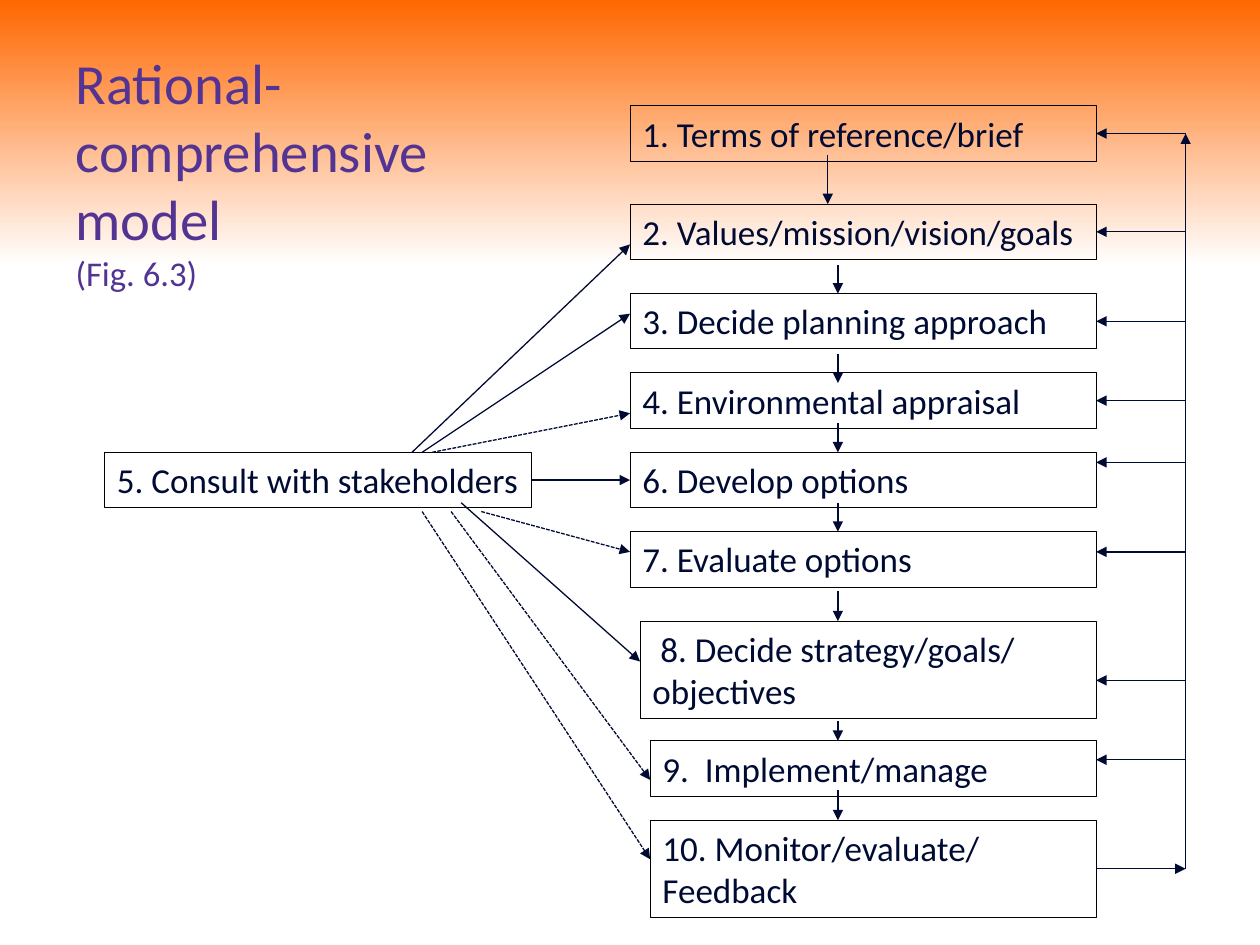
from lxml import etree
from pptx import Presentation
from pptx.dml.color import RGBColor
from pptx.enum import dml, shapes, text
from pptx.oxml import ns
from pptx.util import Inches, Pt

INK = "000B34"
FONT = "Calibri"
EDGE = 8.7    # right side of the steps
RAIL = 9.41   # feedback line
FLOW = 6.65   # arrows between the steps
ONE, TWO = 0.44, 0.77  # box heights for one and two lines

# number: (text, left, top, height)
STEPS = {
    1: ("1. Terms of reference/brief", 5, 0.84, ONE),
    2: ("2. Values/mission/vision/goals", 5, 1.62, ONE),
    3: ("3. Decide planning approach", 5, 2.33, ONE),
    4: ("4. Environmental appraisal", 5, 2.96, ONE),
    6: ("6. Develop options", 5, 3.59, ONE),
    7: ("7. Evaluate options", 5, 4.22, ONE),
    8: (" 8. Decide strategy/goals/ objectives", 5.08, 4.93, TWO),
    9: ("9.  Implement/manage", 5.16, 5.88, ONE),
    10: ("10. Monitor/evaluate/ Feedback", 5.16, 6.51, TWO),
}
CONSULT = ("5. Consult with stakeholders", 0.83, 3.59, ONE)

# x, top, bottom
DOWN = [(6.57, 1.23, 1.62), (FLOW, 2.1, 2.33), (FLOW, 2.81, 3.04),
        (FLOW, 3.36, 3.59), (FLOW, 3.99, 4.22), (FLOW, 4.69, 4.93),
        (FLOW, 5.72, 5.88), (FLOW, 6.27, 6.51)]

# start x, start y, step, end y, dashed
LINKS = [(3.27, 3.59, 2, 1.94, False), (3.35, 3.59, 3, 2.49, False),
         (3.43, 3.59, 4, 3.28, True), (3.82, 4.06, 7, 4.38, True),
         (3.66, 3.99, 8, 5.25, False), (3.58, 4.06, 9, 6.19, True),
         (3.35, 4.06, 10, 6.82, True)]

# feedback into the middle of a step's side, or at a given height
MIDDLE = [1, 2, 3, 4]
HEIGHTS = [3.67, 4.38, 5.4, 6.03]


def rgb(code):
    return RGBColor.from_string(code)


def style(run, size, color):
    run.font.name = FONT
    run.font.size = Pt(size)
    run.font.color.rgb = rgb(color)


def add_box(slide, label, left, top, high, right=EDGE):
    box = slide.shapes.add_shape(
        shapes.MSO_SHAPE.RECTANGLE, Inches(left), Inches(top),
        Inches(right - left), Inches(high))
    box.shadow.inherit = False
    box.fill.background()
    box.line.color.rgb = rgb("000000")
    box.line.width = Pt(0.5)
    frame = box.text_frame
    frame.word_wrap = True
    frame.auto_size = text.MSO_AUTO_SIZE.SHAPE_TO_FIT_TEXT
    frame.vertical_anchor = text.MSO_ANCHOR.TOP
    frame.text = label
    frame.paragraphs[0].alignment = text.PP_ALIGN.LEFT
    style(frame.paragraphs[0].runs[0], 20, INK)
    return box


def add_arrow(slide, x1, y1, x2, y2, dashed=False):
    arrow = slide.shapes.add_connector(
        shapes.MSO_CONNECTOR.STRAIGHT,
        Inches(x1), Inches(y1), Inches(x2), Inches(y2))
    arrow.line.color.rgb = rgb(INK)
    arrow.line.width = Pt(0.75)
    if dashed:
        arrow.line.dash_style = dml.MSO_LINE.SQUARE_DOT
    line = arrow.line._get_or_add_ln()
    etree.SubElement(line, ns.qn("a:tailEnd"), type="triangle")
    etree.SubElement(arrow._element.spPr, ns.qn("a:effectLst"))
    return arrow


def middle(step):
    _, _, top, high = step
    return top + high / 2


def add_title(slide):
    title = slide.shapes.title
    title.left, title.top = Inches(0.5), Inches(0.3)
    title.width, title.height = Inches(3.08), Inches(2.11)
    frame = title.text_frame
    frame.word_wrap = True
    frame.auto_size = text.MSO_AUTO_SIZE.NONE
    frame.vertical_anchor = text.MSO_ANCHOR.MIDDLE
    frame.text = "Rational-comprehensive model\v(Fig. 6.3)"
    para = frame.paragraphs[0]
    para.alignment = text.PP_ALIGN.LEFT
    for run, size in zip(para.runs, (32.4, 19.8)):
        style(run, size, "533492")


def main():
    deck = Presentation()
    deck.slide_width, deck.slide_height = Inches(10), Inches(7.5)
    slide = deck.slides.add_slide(deck.slide_layouts[5])

    back = slide.background.fill
    back.gradient()
    back.gradient_angle = 270
    for stop, (place, color) in zip(back.gradient_stops,
                                    [(0, "FF6700"), (0.28, "FFFFFF")]):
        stop.position = place
        stop.color.rgb = rgb(color)

    add_title(slide)
    boxes = {num: add_box(slide, *step) for num, step in STEPS.items()}
    consult = add_box(slide, *CONSULT, right=4.22)

    for x, top, low in DOWN:
        add_arrow(slide, x, top, x, low)

    for x, y, num, end, dashed in LINKS:
        add_arrow(slide, x, y, STEPS[num][1], end, dashed)
    mid = middle(CONSULT)
    link = add_arrow(slide, 4.22, mid, 5, mid)
    link.begin_connect(consult, 3)
    link.end_connect(boxes[6], 1)

    for num in MIDDLE:
        mid = middle(STEPS[num])
        add_arrow(slide, RAIL, mid, EDGE, mid).end_connect(boxes[num], 3)
    for y in HEIGHTS:
        add_arrow(slide, RAIL, y, EDGE, y)
    low = middle(STEPS[10])
    add_arrow(slide, EDGE, low, RAIL, low).begin_connect(boxes[10], 3)
    add_arrow(slide, RAIL, low, RAIL, middle(STEPS[1]))

    deck.save("out.pptx")


if __name__ == "__main__":
    main()
